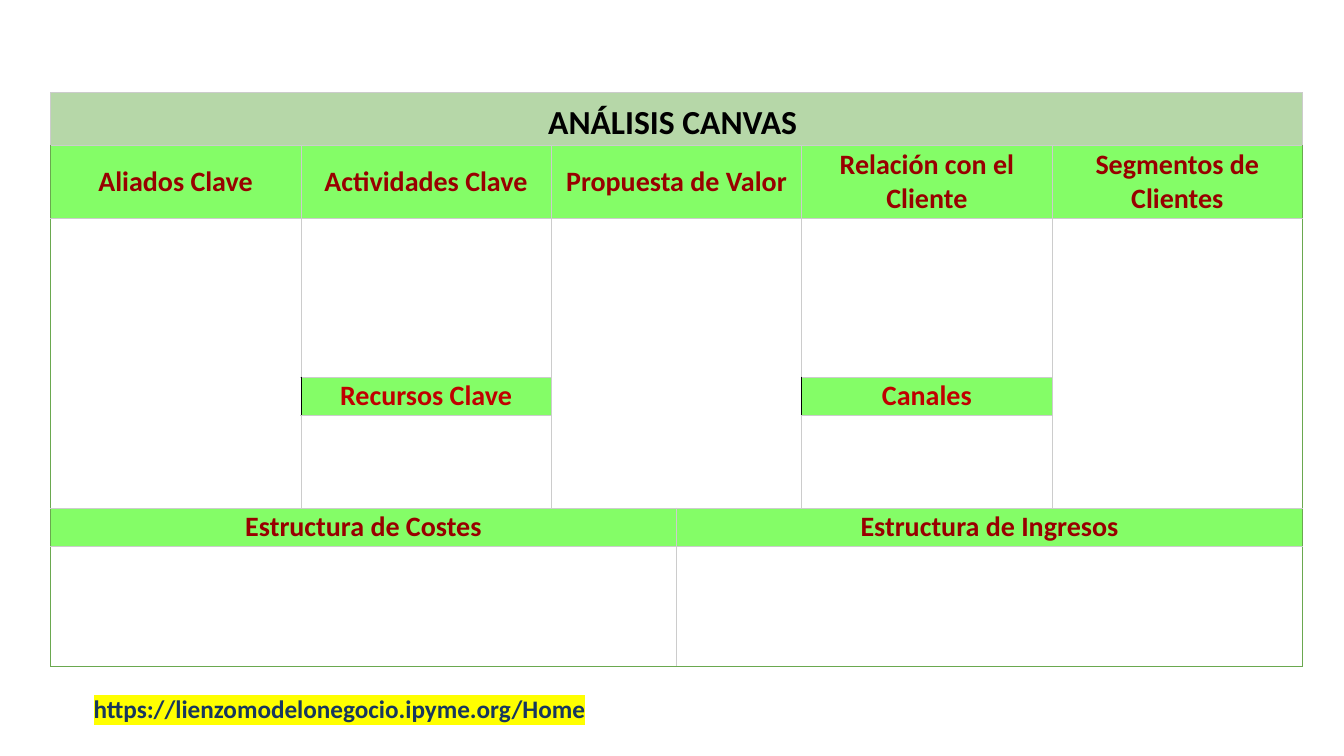
"""Build a one-slide business model canvas with a table and a source link."""
import pptx
import pptx.dml.color
import pptx.enum.text
import pptx.oxml
import pptx.oxml.ns
import pptx.util
from pptx.util import Inches

NAMESPACE = pptx.oxml.ns.nsdecls("a")
GRAY, GREEN, BLACK = "CCCCCC", "6AA84F", "000000"
HEADER_FILL, TITLE_FILL = "84FD67", "B6D7A8"
DARK_RED, RED = "980000", "C00000"


def rgb(color):
    return pptx.dml.color.RGBColor.from_string(color)


def add_text(frame, text, size=20, color=DARK_RED, align="CENTER", highlight=None):
    paragraph = frame.paragraphs[0]
    paragraph.alignment = getattr(pptx.enum.text.PP_ALIGN, align)
    run = paragraph.add_run()
    run.text = text
    run.font.size = pptx.util.Pt(size)
    run.font.bold = True
    run.font.color.rgb = rgb(color)
    run.font.name = "Calibri"
    if highlight:
        element = pptx.oxml.parse_xml(
            f'<a:highlight {NAMESPACE}><a:srgbClr val="{highlight}"/></a:highlight>')
        run.font._element.find(pptx.oxml.ns.qn("a:solidFill")).addnext(element)


presentation = pptx.Presentation()
presentation.slide_width = Inches(13.33)
presentation.slide_height = Inches(7.5)
slide = presentation.slides.add_slide(presentation.slide_layouts[6])

table_width = 12.42
full_column = table_width / 5
column_widths = [full_column, full_column, full_column / 2, full_column / 2,
                 full_column, full_column]
row_heights = [0.52, 0.73, 1.57, 0.38, 0.92, 0.38, 1.19]
row_count, column_count = len(row_heights), len(column_widths)

table = slide.shapes.add_table(
    row_count, column_count, Inches(0.5), Inches(0.92),
    Inches(table_width), Inches(sum(row_heights))).table
table.first_row = False
table.horz_banding = False
for column, width in zip(table.columns, column_widths):
    column.width = Inches(width)
for row, height in zip(table.rows, row_heights):
    row.height = Inches(height)

# Each area: row, column, rows spanned, columns spanned, heading
areas = [
    (0, 0, 1, 6, "ANÁLISIS CANVAS "),
    (1, 0, 1, 1, "Aliados Clave"),
    (1, 1, 1, 1, "Actividades Clave"),
    (1, 2, 1, 2, "Propuesta de Valor"),
    (1, 4, 1, 1, "Relación con el Cliente"),
    (1, 5, 1, 1, "Segmentos de Clientes"),
    (2, 0, 3, 1, ""),
    (2, 1, 1, 1, ""),
    (2, 2, 3, 2, ""),
    (2, 4, 1, 1, ""),
    (2, 5, 3, 1, ""),
    (3, 1, 1, 1, "Recursos Clave"),
    (3, 4, 1, 1, "Canales"),
    (4, 1, 1, 1, ""),
    (4, 4, 1, 1, ""),
    (5, 0, 1, 3, "Estructura de Costes"),
    (5, 3, 1, 3, "Estructura de Ingresos"),
    (6, 0, 1, 3, ""),
    (6, 3, 1, 3, ""),
]

for top, left, height, width, heading in areas:
    is_title, is_inner_heading = top == 0, top == 3
    bottom, right = top + height, left + width
    borders = {"L": GRAY, "R": GRAY, "T": GRAY, "B": GRAY}
    if left == 0 and not is_title:
        borders["L"] = GREEN
    if right == column_count and not is_title:
        borders["R"] = GREEN
    if bottom == row_count:
        borders["B"] = GREEN
    if is_inner_heading:
        borders["L"] = BLACK

    for row_index in range(top, bottom):
        for column_index in range(left, right):
            cell = table.cell(row_index, column_index)
            cell.margin_left = cell.margin_right = Inches(0.03)
            cell.margin_top = cell.margin_bottom = Inches(0.02)
            if heading:
                cell.fill.solid()
                cell.fill.fore_color.rgb = rgb(TITLE_FILL if is_title else HEADER_FILL)
            else:
                cell.fill.background()
            properties = cell._tc.get_or_add_tcPr()
            for position, (side, color) in enumerate(borders.items()):
                properties.insert(position, pptx.oxml.parse_xml(
                    f'<a:ln{side} {NAMESPACE} w="{pptx.util.Pt(0.6)}"><a:solidFill>'
                    f'<a:srgbClr val="{color}"/></a:solidFill></a:ln{side}>'))

    origin = table.cell(top, left)
    if height * width > 1:
        origin.merge(table.cell(bottom - 1, right - 1))
    if is_title:
        origin.vertical_anchor = pptx.enum.text.MSO_ANCHOR.BOTTOM
        add_text(origin.text_frame, heading, size=24, color=BLACK)
    elif heading:
        origin.vertical_anchor = pptx.enum.text.MSO_ANCHOR.MIDDLE
        add_text(origin.text_frame, heading, color=RED if is_inner_heading else DARK_RED)

link_box = slide.shapes.add_textbox(Inches(0.83), Inches(6.83), Inches(5.67), Inches(0.4))
link_box.text_frame.word_wrap = True
add_text(link_box.text_frame, "https://lienzomodelonegocio.ipyme.org/Home",
         size=18, color="17375E", align="LEFT", highlight="FFFF00")

presentation.save("out.pptx")
